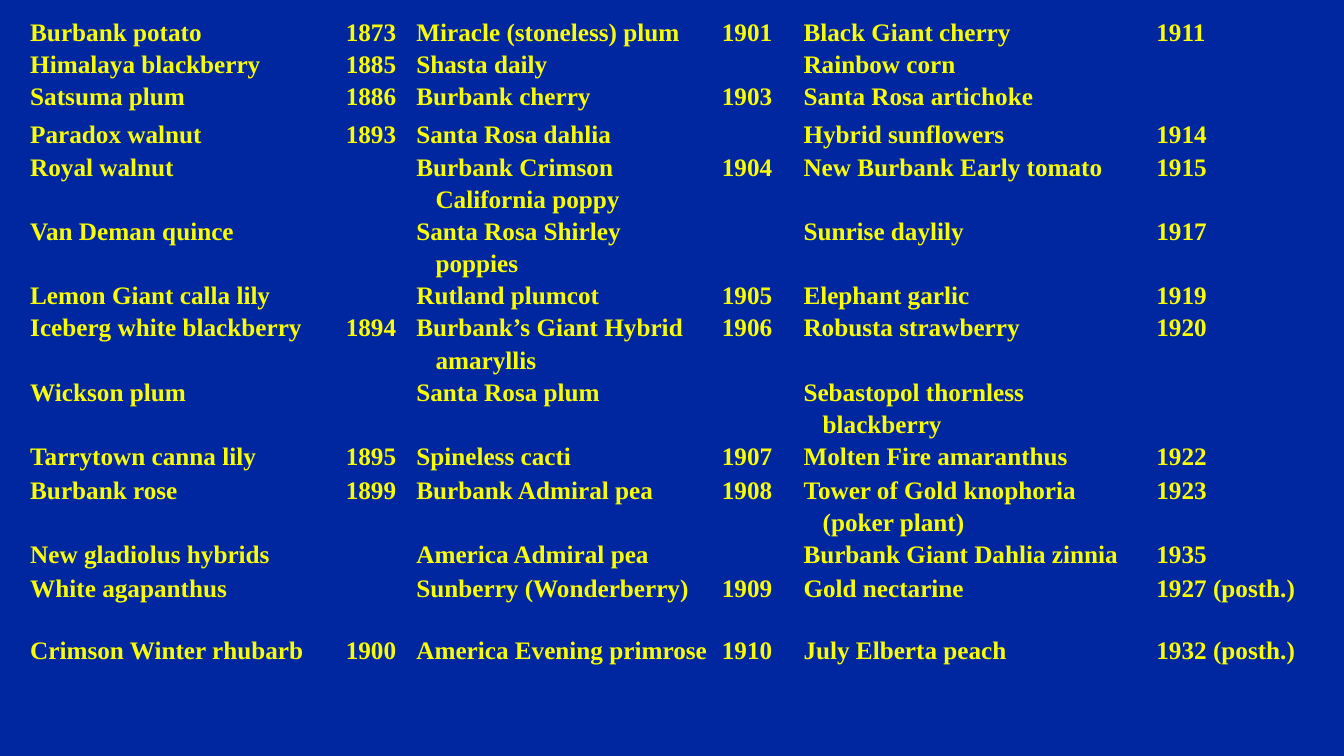
from pptx import Presentation
from pptx.dml.color import RGBColor
from pptx.enum.text import MSO_ANCHOR, PP_ALIGN
from pptx.util import Inches, Pt

TOP = MSO_ANCHOR.TOP
LEFT = PP_ALIGN.LEFT

# Each row holds three pairs of plant and year of introduction.
INTRODUCTIONS = [
    ("Burbank potato", "1873", "Miracle (stoneless) plum", "1901", "Black Giant cherry", "1911"),
    ("Himalaya blackberry", "1885", "Shasta daily", "", "Rainbow corn", ""),
    ("Satsuma plum", "1886", "Burbank cherry", "1903", "Santa Rosa artichoke", ""),
    ("Paradox walnut", "1893", "Santa Rosa dahlia", "", "Hybrid sunflowers", "1914"),
    ("Royal walnut", "", "Burbank Crimson California poppy", "1904",
     "New Burbank Early tomato", "1915"),
    ("Van Deman quince", "", "Santa Rosa Shirley poppies", "", "Sunrise daylily", "1917"),
    ("Lemon Giant calla lily", "", "Rutland plumcot", "1905", "Elephant garlic", "1919"),
    ("Iceberg white blackberry", "1894", "Burbank’s Giant Hybrid amaryllis", "1906",
     "Robusta strawberry", "1920"),
    ("Wickson plum", "", "Santa Rosa plum", "", "Sebastopol thornless blackberry", ""),
    ("Tarrytown canna lily", "1895", "Spineless cacti", "1907", "Molten Fire amaranthus", "1922"),
    ("Burbank rose", "1899", "Burbank Admiral pea", "1908",
     "Tower of Gold knophoria (poker plant)", "1923"),
    ("New gladiolus hybrids", "", "America Admiral pea", "", "Burbank Giant Dahlia zinnia", "1935"),
    ("White agapanthus", "", "Sunberry (Wonderberry)", "1909", "Gold nectarine", "1927 (posth.)"),
    ("Crimson Winter rhubarb", "1900", "America Evening primrose", "1910",
     "July Elberta peach", "1932 (posth.)"),
]
COLUMN_WIDTHS = [3.13, 0.7, 3.03, 0.81, 3.5, 1.67]
ROW_HEIGHTS = [0.3, 0.31, 0.37, 0.33, 0.62, 0.54, 0.31,
               0.61, 0.29, 0.34, 0.59, 0.34, 0.61, 0.34]
TABLE_LEFT, TABLE_TOP = 0.23, 0.15
HANGING_INDENT = 0.19
PLAIN_TABLE_STYLE = "{2D5ABB26-0587-4C30-8999-92F81FD0307C}"

THEME = {
    "background": RGBColor(0x00, 0x27, 0x9F),
    "font": {"name": "Times New Roman", "size": Pt(18), "bold": True},
    "text": RGBColor(0xFA, 0xFD, 0x00),
}
CELL_FORMAT = {
    "margin_left": Inches(0.07), "margin_right": Inches(0.07),
    "margin_top": 0, "margin_bottom": 0, "vertical_anchor": TOP,
}
PARAGRAPH_FORMAT = {"line_spacing": 1.15, "alignment": LEFT}


def apply_format(target, values):
    for attribute, value in values.items():
        setattr(target, attribute, value)


def fill_cell(cell, entry, is_plant):
    """Write one entry; plant names wrap with a hanging indent."""
    apply_format(cell, CELL_FORMAT)
    cell.fill.background()
    if not entry:
        return
    paragraph = cell.text_frame.paragraphs[0]
    apply_format(paragraph, PARAGRAPH_FORMAT)
    if is_plant:
        properties = paragraph._p.get_or_add_pPr()
        properties.set("marL", str(Inches(HANGING_INDENT)))
        properties.set("indent", str(-Inches(HANGING_INDENT)))
    run = paragraph.add_run()
    run.text = entry
    apply_format(run.font, THEME["font"])
    run.font.color.rgb = THEME["text"]


def add_introductions(slide):
    frame = slide.shapes.add_table(
        len(INTRODUCTIONS), len(COLUMN_WIDTHS), Inches(TABLE_LEFT), Inches(TABLE_TOP),
        Inches(sum(COLUMN_WIDTHS)), Inches(sum(ROW_HEIGHTS)))
    table = frame.table
    apply_format(table, {"first_row": False, "horz_banding": False})
    table._tbl.tblPr[0].text = PLAIN_TABLE_STYLE
    for column, width in zip(table.columns, COLUMN_WIDTHS):
        column.width = Inches(width)
    for row, height, entries in zip(table.rows, ROW_HEIGHTS, INTRODUCTIONS):
        row.height = Inches(height)
        for index, (cell, entry) in enumerate(zip(row.cells, entries)):
            fill_cell(cell, entry, is_plant=index % 2 == 0)


def main():
    presentation = Presentation()
    presentation.slide_width = Inches(13.33)
    presentation.slide_height = Inches(7.5)
    slide = presentation.slides.add_slide(presentation.slide_layouts[6])
    slide.background.fill.solid()
    slide.background.fill.fore_color.rgb = THEME["background"]
    add_introductions(slide)
    presentation.save("out.pptx")


if __name__ == "__main__":
    main()
